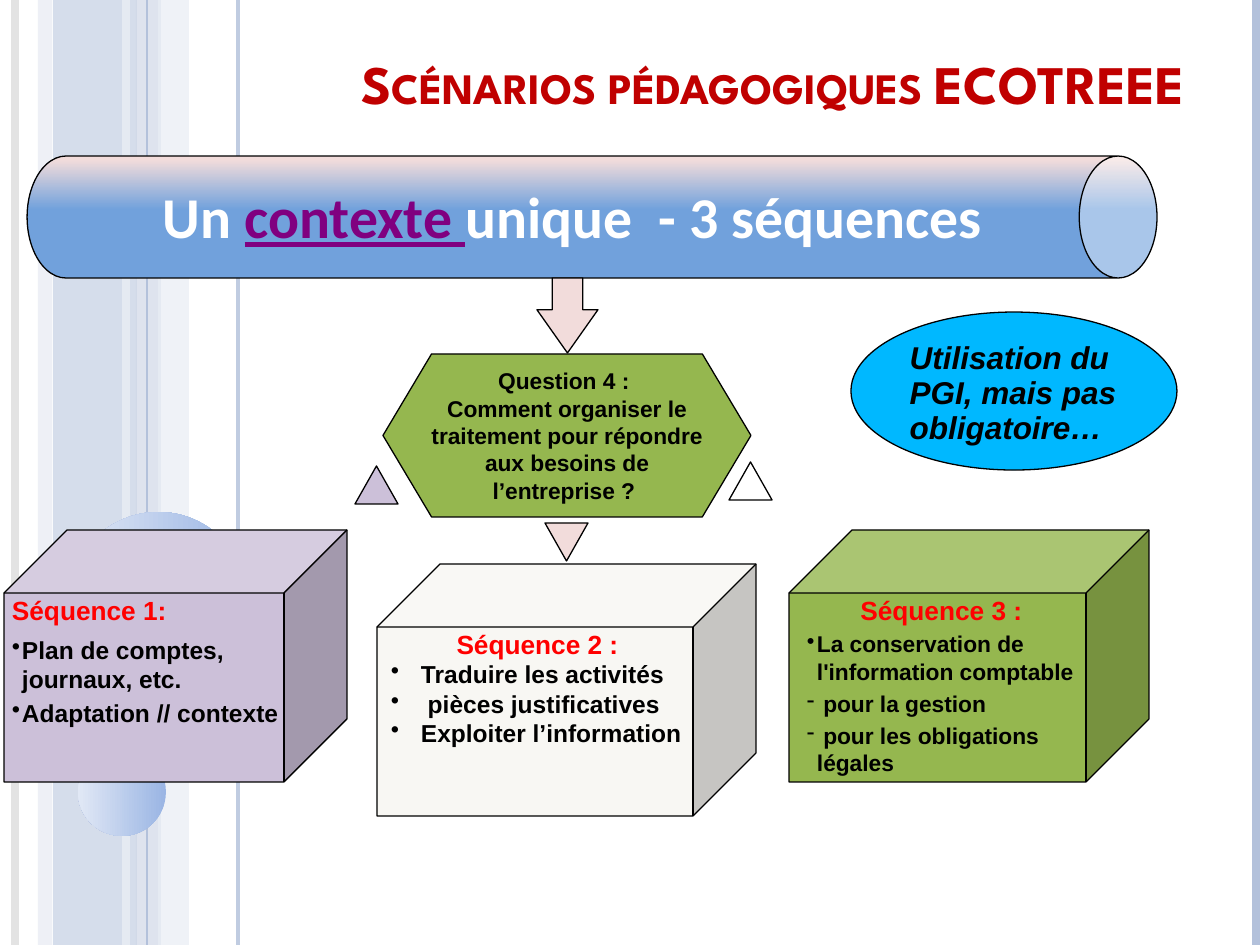
from lxml import etree
from pptx import Presentation
from pptx import util as u
from pptx.dml.color import RGBColor
from pptx.enum import shapes, text
from pptx.oxml import ns

SCALE = 914400 / 126  # EMU in one px
WIDTH, HEIGHT = 1260, 945

BLACK = RGBColor(0x00, 0x00, 0x00)
WHITE = RGBColor(0xFF, 0xFF, 0xFF)
RED = RGBColor(0xFF, 0x00, 0x00)
DARK_RED = RGBColor(0xC0, 0x00, 0x00)
PURPLE = RGBColor(0x80, 0x00, 0x80)
LILAC = RGBColor(0xCC, 0xC0, 0xD9)
PINK = RGBColor(0xF2, 0xDC, 0xDB)
GREEN = RGBColor(0x95, 0xB7, 0x4F)
IVORY = RGBColor(0xF8, 0xF7, 0xF3)
CYAN = RGBColor(0x00, 0xB8, 0xFF)
BLUE = RGBColor(0x71, 0xA1, 0xDC)
STEEL = RGBColor(0xB3, 0xC1, 0xDB)
MIST = RGBColor(0xD0, 0xD8, 0xE8)
PALE = RGBColor(0xE9, 0xED, 0xF4)
GREY = RGBColor(0xD9, 0xD9, 0xD9)
DISC_DARK = RGBColor(0x9A, 0xB5, 0xE4)
DISC_LIGHT = RGBColor(0xE1, 0xE8, 0xF5)

SHAPE = shapes.MSO_SHAPE
CENTER = text.PP_ALIGN.CENTER


def px(length):
    return u.Emu(round(length * SCALE))


def set_alpha(element, percent):
    for color in element.iter(ns.qn("a:srgbClr")):
        etree.SubElement(color, ns.qn("a:alpha")).set("val", str(percent * 1000))


def add_shape(slide, kind, box, fill=None, outline=BLACK):
    shape = slide.shapes.add_shape(kind, *map(px, box))
    shape.shadow.inherit = False
    if fill is not None:
        shape.fill.solid()
        shape.fill.fore_color.rgb = fill
    if outline is None:
        shape.line.fill.background()
    else:
        shape.line.color.rgb = outline
        shape.line.width = u.Pt(0.75)
    return shape


def set_gradient(shape, *stops):
    shape.fill.gradient()
    shape.fill.gradient_angle = 180
    for stop, (position, color) in zip(shape.fill.gradient_stops, stops):
        stop.position = position
        stop.color.rgb = color


def set_frame(shape, insets, anchor=text.MSO_ANCHOR.TOP):
    frame = shape.text_frame
    frame.word_wrap = True
    frame.vertical_anchor = anchor
    (frame.margin_left, frame.margin_top,
     frame.margin_right, frame.margin_bottom) = map(px, insets)
    return frame


def set_paragraph(paragraph, size, color, name="Arial", align=text.PP_ALIGN.LEFT, after=0):
    paragraph.alignment = align
    paragraph.space_after = u.Pt(after)
    font = paragraph.font
    font.name, font.size, font.bold = name, u.Pt(size), True
    font.color.rgb = color


def set_indent(paragraph, margin, indent, bullet=None):
    properties = paragraph._p.get_or_add_pPr()
    properties.set("marL", str(px(margin)))
    properties.set("indent", str(px(indent)))
    if bullet:
        mark = etree.Element(ns.qn("a:buChar"), char=bullet)
        properties.find(ns.qn("a:defRPr")).addprevious(mark)


def add_background(slide):
    # Vertical bands: left, width, colour, opacity
    for left, width, color, alpha in [(53, 84, STEEL, 54), (38, 14, MIST, 36),
                                      (136, 25, MIST, 70), (158, 31, PALE, 71)]:
        band = add_shape(slide, SHAPE.RECTANGLE, (left, 0, width, HEIGHT), color, None)
        set_alpha(band._element.spPr, alpha)
    # Vertical rules: x, colour, points, opacity
    for x, color, width, alpha in [(15, GREY, 4.5, 73), (126, PALE, 4.5, 83),
                                   (238, STEEL, 2.25, 82), (147, STEEL, 0.75, 100),
                                   (1256, STEEL, 4.5, 100)]:
        rule = slide.shapes.add_connector(
            shapes.MSO_CONNECTOR.STRAIGHT, px(x), px(0), px(x), px(HEIGHT))
        rule.line.color.rgb = color
        rule.line.width = u.Pt(width)
        properties = rule._element.spPr
        etree.SubElement(properties, ns.qn("a:effectLst"))
        set_alpha(properties, alpha)
    # Discs
    for left, top, size in [(69, 512, 179), (78, 748, 88)]:
        disc = add_shape(slide, SHAPE.OVAL, (left, top, size, size), outline=None)
        set_gradient(disc, (0, DISC_DARK), (1, DISC_LIGHT))


def add_title(slide, box):
    title = slide.shapes.add_textbox(*map(px, box))
    frame = set_frame(title, (13, 5, 13, 6), text.MSO_ANCHOR.BOTTOM)
    paragraph = frame.paragraphs[0]
    paragraph.text = "Scénarios pédagogiques ECOTREEE"
    set_paragraph(paragraph, 31, DARK_RED, "League Spartan", text.PP_ALIGN.RIGHT)
    paragraph.line_spacing = 0.8
    paragraph.runs[0].font._element.set("cap", "small")


def add_context(slide, box):
    # A can lying on its side: built upright about the same centre, then turned
    left, top, width, height = box
    shift = (width - height) / 2
    can = add_shape(slide, SHAPE.CAN, (left + shift, top - shift, height, width))
    can.rotation = 90
    can.adjustments[0] = 0.638
    set_gradient(can, (0.56, BLUE), (0.97, PINK))
    frame = set_frame(can, (0, 1, 3, 1), text.MSO_ANCHOR.MIDDLE)
    frame._txBody.bodyPr.set("vert", "vert270")
    paragraph = frame.paragraphs[0]
    for words in ("Un ", "contexte ", "unique  - 3 séquences"):
        paragraph.add_run().text = words
    set_paragraph(paragraph, 33, WHITE, "Calibri", CENTER, 9.1)
    link = paragraph.runs[1].font
    link.color.rgb = PURPLE
    link.underline = True


def add_question(slide, box):
    left, top, width, height = box
    arrow = add_shape(slide, SHAPE.DOWN_ARROW,
                      (left + width / 2 - 30, top - 76, 61, 75), PINK)
    arrow.adjustments[1] = 0.708
    hexagon = add_shape(slide, SHAPE.HEXAGON, box, GREEN)
    hexagon.adjustments[0] = 0.298
    frame = set_frame(hexagon, (0, 0, 0, 0), text.MSO_ANCHOR.MIDDLE)
    paragraph = frame.paragraphs[0]
    paragraph.text = ("Question 4\u00a0: \vComment organiser le traitement pour répondre "
                      "aux besoins de l’entreprise ? ")
    set_paragraph(paragraph, 13, BLACK, align=CENTER, after=9.1)
    # Triangles around the hexagon
    for x, y, color, turn in [(-28, 112, LILAC, 0), (346, 108, WHITE, 0),
                              (162, 169, PINK, 180)]:
        triangle = add_shape(slide, SHAPE.ISOSCELES_TRIANGLE,
                             (left + x, top + y, 43, 38), color)
        triangle.rotation = turn


def add_sequence(slide, box, color, heading, items, size, align, indents, after):
    """indents: heading margin, item margin, item indent; after: heading, items."""
    cube = add_shape(slide, SHAPE.CUBE, box, color)
    cube.adjustments[0] = 0.25
    frame = set_frame(cube, (8, 1, 3, 1))
    first = frame.paragraphs[0]
    first.text = heading
    set_paragraph(first, 15, RED, align=align, after=after[0])
    set_indent(first, indents[0], 0)
    for bullet, words in items:
        paragraph = frame.add_paragraph()
        paragraph.text = words
        set_paragraph(paragraph, size, BLACK, after=after[1])
        set_indent(paragraph, indents[1], indents[2], bullet)


def add_remark(slide, box):
    oval = add_shape(slide, SHAPE.OVAL, box, CYAN)
    paragraph = set_frame(oval, (11, 6, 11, 6)).paragraphs[0]
    paragraph.text = "Utilisation du PGI, mais pas obligatoire…"
    set_paragraph(paragraph, 18, BLACK)
    paragraph.font.italic = True
    paragraph.line_spacing = 0.93


def main():
    presentation = Presentation()
    presentation.slide_width, presentation.slide_height = px(WIDTH), px(HEIGHT)
    slide = presentation.slides.add_slide(presentation.slide_layouts[6])
    add_background(slide)
    add_title(slide, (244, 38, 953, 83))
    add_context(slide, (27, 156, 1130, 122))
    add_question(slide, (383, 354, 368, 163))
    add_sequence(slide, (789, 530, 360, 252), GREEN, "Séquence 3 : ",
                 [("•", "La conservation de l'information comptable"),
                  ("-", " pour la gestion"), ("-", " pour les obligations légales")],
                 13, CENTER, (10, 20, -10), (2.7, 2.7))
    add_sequence(slide, (377, 564, 379, 252), IVORY, "Séquence 2 :",
                 [("•", "Traduire les activités"), ("•", " pièces justificatives"),
                  ("•", "Exploiter l’information")],
                 14, CENTER, (0, 36, -30), (0, 0))
    add_sequence(slide, (4, 530, 343, 252), LILAC, "Séquence 1:",
                 [("•", "Plan de comptes, journaux, etc."), ("•", "Adaptation // contexte")],
                 14, text.PP_ALIGN.LEFT, (0, 10, -10), (5.4, 2.7))
    add_remark(slide, (851, 312, 326, 158))
    presentation.save("out.pptx")


if __name__ == "__main__":
    main()
